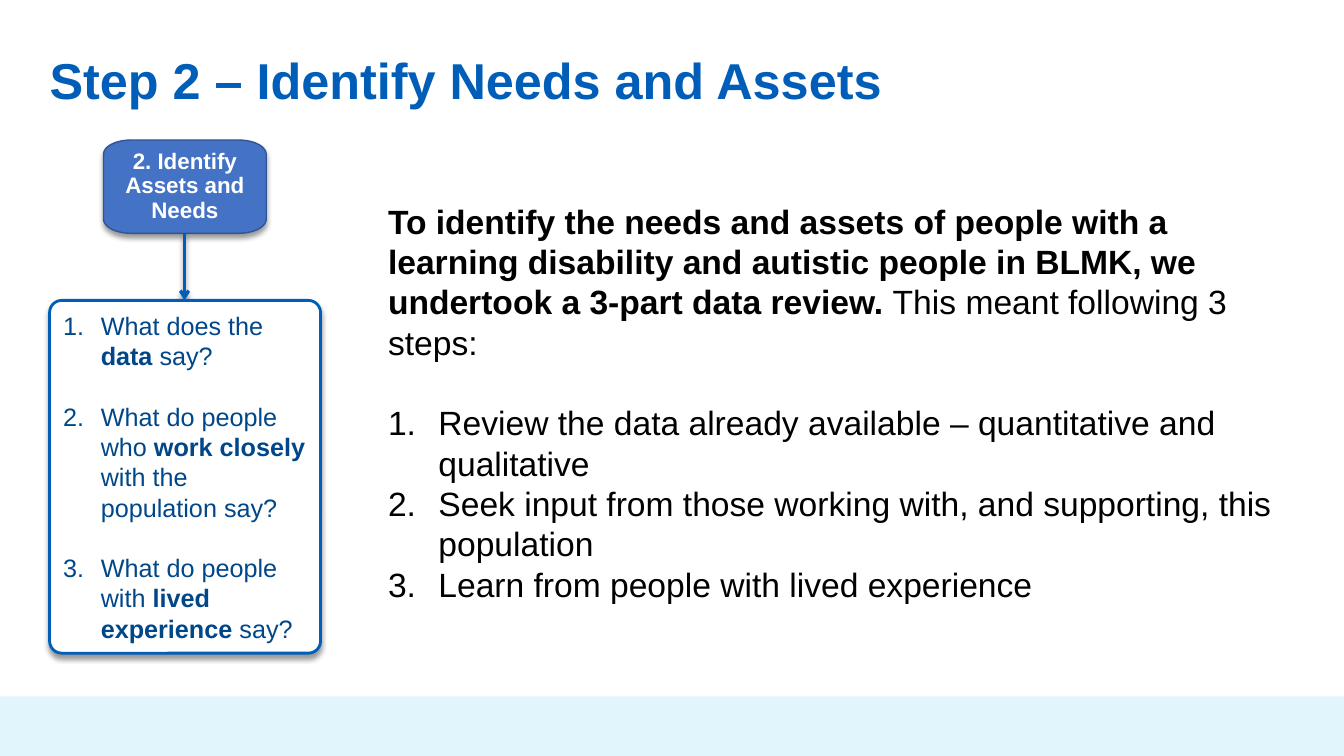
from math import cos, pi, sin

from lxml.etree import SubElement
from pptx import Presentation
from pptx.dml.color import RGBColor
from pptx.enum.shapes import MSO_CONNECTOR, MSO_SHAPE
from pptx.enum.text import MSO_ANCHOR as Anchor, PP_ALIGN as Align
from pptx.oxml.ns import qn
from pptx.util import Cm, Pt

FONT = "Arial"
COLOURS = {
    "band": "E1F5FC",
    "blue": "005EB8",
    "navy": "00478A",
    "step": "4472C4",
    "step_edge": "2F5597",
    "white": "FFFFFF",
    "black": "000000",
}


def colour(name):
    return RGBColor.from_string(COLOURS[name])


def style_shape(shape, fill, edge=None, width=1):
    shape.shadow.inherit = False
    shape.fill.solid()
    shape.fill.fore_color.rgb = colour(fill)
    if edge:
        shape.line.color.rgb = colour(edge)
        shape.line.width = Pt(width)
    else:
        shape.line.fill.background()


def add_shadow(shape):
    """Soft shadow falling straight down."""
    properties = shape._element.spPr
    effects = properties.find(qn("a:effectLst"))
    if effects is None:
        effects = SubElement(properties, qn("a:effectLst"))
    shadow = SubElement(effects, qn("a:outerShdw"), blurRad=str(Pt(4)),
                        dist=str(Pt(3)), dir="5400000", algn="t", rotWithShape="0")
    tint = SubElement(shadow, qn("a:srgbClr"), val=COLOURS["black"])
    SubElement(tint, qn("a:alpha"), val="40000")


def prepare_frame(shape, anchor, inset=None):
    frame = shape.text_frame
    frame.word_wrap = True
    frame.vertical_anchor = anchor
    if inset is not None:
        frame.margin_left = frame.margin_right = Cm(inset)
        frame.margin_top = frame.margin_bottom = Cm(inset)
    return frame


def write_runs(paragraph, runs, size, ink, align=Align.LEFT):
    """Each run is a pair of text and boldness."""
    paragraph.alignment = align
    for text, bold in runs:
        run = paragraph.add_run()
        run.text = text
        run.font.name = FONT
        run.font.size = Pt(size)
        run.font.bold = bold
        run.font.color.rgb = colour(ink)


def number_paragraph(paragraph, indent):
    properties = paragraph._p.get_or_add_pPr()
    properties.set("marL", str(Cm(indent)))
    properties.set("indent", str(-Cm(indent)))
    SubElement(properties, qn("a:buFont"), typeface="+mj-lt")
    SubElement(properties, qn("a:buAutoNum"), type="arabicPeriod")


def add_text(slide, box, anchor, inset=None):
    return prepare_frame(slide.shapes.add_textbox(*map(Cm, box)), anchor, inset)


def add_band(slide):
    band = slide.shapes.add_shape(
        MSO_SHAPE.RECTANGLE, Cm(0), Cm(17.55), Cm(33.87), Cm(1.5))
    style_shape(band, "band")


def add_step(slide, left, top, width, height, runs):
    """Box whose corners are quarter ellipses."""
    radius_x, radius_y, pieces = 0.69, 0.36, 12
    corners = [
        (left + radius_x, top + radius_y),
        (left + width - radius_x, top + radius_y),
        (left + width - radius_x, top + height - radius_y),
        (left + radius_x, top + height - radius_y),
    ]
    outline = []
    for corner, (x, y) in enumerate(corners):
        for piece in range(pieces + 1):
            angle = pi + pi / 2 * (corner + piece / pieces)
            outline.append((Cm(x + radius_x * cos(angle)),
                            Cm(y + radius_y * sin(angle))))
    builder = slide.shapes.build_freeform(*outline[0])
    builder.add_line_segments(outline[1:], close=True)
    step = builder.convert_to_shape()
    style_shape(step, "step", "step_edge")
    add_shadow(step)
    label = prepare_frame(step, Anchor.MIDDLE, 0.38).paragraphs[0]
    label.line_spacing = 0.9
    write_runs(label, runs, 16, "white", Align.CENTER)


def add_arrow(slide, x, top, bottom):
    arrow = slide.shapes.add_connector(
        MSO_CONNECTOR.STRAIGHT, Cm(x), Cm(top), Cm(x), Cm(bottom))
    arrow.line.color.rgb = colour("blue")
    arrow.line.width = Pt(2.25)
    SubElement(arrow.line._get_or_add_ln(), qn("a:tailEnd"), type="arrow")
    add_shadow(arrow)


def add_questions(slide, box, questions):
    card = slide.shapes.add_shape(MSO_SHAPE.ROUNDED_RECTANGLE, *map(Cm, box))
    card.adjustments[0] = 0.045
    style_shape(card, "white", "blue", 2)
    add_shadow(card)
    frame = prepare_frame(card, Anchor.MIDDLE)
    for index, runs in enumerate(questions):
        question = frame.add_paragraph() if index else frame.paragraphs[0]
        number_paragraph(question, 0.95)
        if index:
            question.space_before = Pt(21.6)
        write_runs(question, runs, 18, "navy")


def add_review(slide, box, intro, steps):
    frame = add_text(slide, box, Anchor.TOP)
    write_runs(frame.paragraphs[0], intro, 24, "black")
    frame.paragraphs[0].space_after = Pt(28.8)
    for text in steps:
        step = frame.add_paragraph()
        number_paragraph(step, 1.27)
        write_runs(step, [(text, False)], 24, "black")


def main():
    deck = Presentation()
    deck.slide_width, deck.slide_height = Cm(33.87), Cm(19.05)
    slide = deck.slides.add_slide(deck.slide_layouts[6])

    # Footer band and title
    add_band(slide)
    title = add_text(slide, (1.25, 1.2, 31.1, 1.6), Anchor.MIDDLE, 0)
    write_runs(title.paragraphs[0],
               [("Step 2 – Identify Needs and Assets", True)], 36, "blue")

    # Data review on the right
    add_review(
        slide, (9.53, 4.93, 23.62, 11.53),
        [("To identify the needs and assets of people with a learning disability "
          "and autistic people in BLMK, we undertook a 3-part data review. ", True),
         ("This meant following 3 steps:", False)],
        ["Review the data already available – quantitative and qualitative",
         "Seek input from those working with, and supporting, this population",
         "Learn from people with lived experience"])

    # Step and its questions on the left
    add_step(slide, 2.61, 3.53, 4.1, 2.35, [("2. Identify Assets and Needs", True)])
    add_arrow(slide, 4.65, 5.88, 7.57)
    add_questions(slide, (1.25, 7.57, 6.83, 8.89), [
        [("What does the ", False), ("data", True), (" say?", False)],
        [("What do people who ", False), ("work closely ", True),
         ("with the population say?", False)],
        [("What do people with ", False), ("lived experience ", True),
         ("say?", False)],
    ])

    deck.save("out.pptx")


if __name__ == "__main__":
    main()
